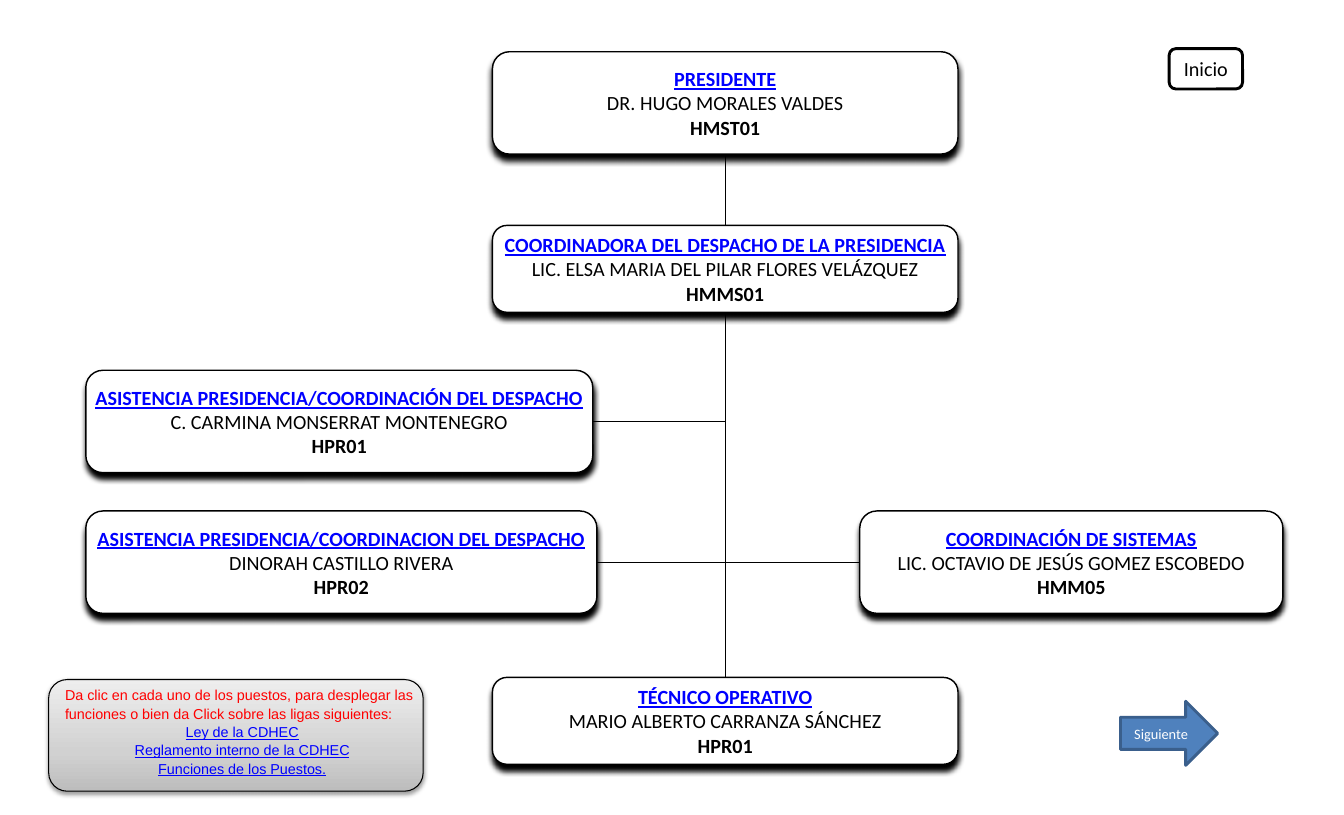
import copy

import pptx
import pptx.dml.color
import pptx.enum.shapes
import pptx.enum.text
import pptx.util
from lxml import etree
from pptx.util import Inches

SHAPE = pptx.enum.shapes.MSO_SHAPE
ALIGN = pptx.enum.text.PP_ALIGN
ANCHOR = pptx.enum.text.MSO_ANCHOR
NS = "http://schemas.openxmlformats.org/drawingml/2006/main"
BLACK, WHITE, LINK = "000000", "FFFFFF", "0000FF"
TOP, LEFT, BOTTOM, RIGHT = range(4)


def color(value):
    return pptx.dml.color.RGBColor.from_string(value)


def add_box(slide, kind, box, fill, outline, weight):
    shape = slide.shapes.add_shape(kind, *map(Inches, box))
    shape.shadow.inherit = False
    if fill:
        shape.fill.solid()
        shape.fill.fore_color.rgb = color(fill)
    shape.line.color.rgb = color(outline)
    shape.line.width = pptx.util.Pt(weight)
    shape.text_frame.word_wrap = True
    shape.text_frame.vertical_anchor = ANCHOR.MIDDLE
    return shape


def add_shadow(shape, alpha, blur, distance):
    effects = shape.element.spPr.find(f"{{{NS}}}effectLst")
    shadow = etree.SubElement(
        effects, f"{{{NS}}}outerShdw", blurRad=str(pptx.util.Pt(blur)),
        dist=str(pptx.util.Pt(distance)), dir="5400000", rotWithShape="0")
    tint = etree.SubElement(shadow, f"{{{NS}}}srgbClr", val=BLACK)
    etree.SubElement(tint, f"{{{NS}}}alpha", val=str(alpha * 1000))


def write_lines(frame, lines, size, font="Calibri"):
    for index, (text, tint, bold, underline, align) in enumerate(lines):
        paragraph = frame.add_paragraph() if index else frame.paragraphs[0]
        paragraph.alignment = align
        run = paragraph.add_run()
        run.text = text
        run.font.size = pptx.util.Pt(size)
        run.font.name = font
        run.font.color.rgb = color(tint)
        run.font.bold = bold
        run.font.underline = underline


def add_post(slide, box, post, holder, code):
    shape = add_box(slide, SHAPE.ROUNDED_RECTANGLE, box, WHITE, BLACK, 1)
    add_shadow(shape, 100, 4, 4)
    frame = shape.text_frame
    frame.word_wrap = False
    frame.margin_left = frame.margin_right = Inches(0.17)
    frame.margin_top = frame.margin_bottom = Inches(0.09)
    write_lines(frame, [
        (post, LINK, True, True, ALIGN.CENTER),
        (holder, BLACK, False, False, ALIGN.CENTER),
        (code, BLACK, True, False, ALIGN.CENTER),
    ], 14)
    return shape


def add_link(slide, start, start_side, end, end_side):
    link = slide.shapes.add_connector(
        pptx.enum.shapes.MSO_CONNECTOR.STRAIGHT, 0, 0, 0, 0)
    link.begin_connect(start, start_side)
    if end:
        link.end_connect(end, end_side)
    link.line.color.rgb = color(BLACK)
    link.line.width = pptx.util.Pt(0.75)
    etree.SubElement(link.element.spPr, f"{{{NS}}}effectLst")
    return link


def add_org_chart(slide, left, top):
    column, width, tall, short = left + 3.93, 4.5, 0.99, 0.84
    third_row, fourth_row = top + 3.08, top + 4.44

    president = add_post(slide, (column, top, width, tall), "PRESIDENTE",
                         "DR. HUGO MORALES VALDES", "HMST01")
    technician = add_post(slide, (column, top + 6.05, width, short), "TÉCNICO OPERATIVO",
                          "MARIO ALBERTO CARRANZA SÁNCHEZ", "HPR01")
    trunk = add_link(slide, president, BOTTOM, technician, TOP)
    add_post(slide, (column, top + 1.68, width, short),
             "COORDINADORA DEL DESPACHO DE LA PRESIDENCIA",
             "LIC. ELSA MARIA DEL PILAR FLORES VELÁZQUEZ", "HMMS01")

    first_assistant = add_post(slide, (left, third_row, 4.9, tall),
                               "ASISTENCIA PRESIDENCIA/COORDINACIÓN DEL DESPACHO",
                               "C. CARMINA MONSERRAT MONTENEGRO", "HPR01")
    branch = add_link(slide, first_assistant, RIGHT, None, None)
    branch.end_x, branch.end_y = trunk.begin_x, branch.begin_y

    second_assistant = add_post(slide, (left, fourth_row, 4.94, tall),
                                "ASISTENCIA PRESIDENCIA/COORDINACION DEL DESPACHO",
                                "DINORAH CASTILLO RIVERA", "HPR02")
    systems = add_post(slide, (left + 7.48, fourth_row, 4.09, tall),
                       "COORDINACIÓN DE SISTEMAS",
                       "LIC. OCTAVIO DE JESÚS GOMEZ ESCOBEDO", "HMM05")
    add_link(slide, second_assistant, RIGHT, systems, LEFT)


def add_instructions(slide, left, top, width, height):
    panel = add_box(slide, SHAPE.ROUNDED_RECTANGLE, (left, top, width, height),
                    None, BLACK, 0.75)
    add_shadow(panel, 38, 3.1, 1.6)
    panel.fill.gradient()
    panel.fill.gradient_angle = 90
    stops = panel.element.spPr.find(f".//{{{NS}}}gsLst")
    stops.append(copy.deepcopy(stops[0]))
    shades = [(0, "BDBDBD"), (0.35, "D1D1D1"), (1, "EEEEEE")]
    for stop, (position, shade) in zip(panel.fill.gradient_stops, shades):
        stop.position = position
        stop.color.rgb = color(shade)

    guide = slide.shapes.add_textbox(
        *map(Inches, (left + 0.06, top + 0.01, width, 0.94))).text_frame
    guide.word_wrap = True
    links = ["Ley de la CDHEC", "Reglamento interno de la CDHEC",
             "Funciones de los Puestos."]
    write_lines(guide, [
        ("Da clic en cada uno de los puestos, para desplegar las funciones "
         "o bien da Click sobre las ligas siguientes:",
         "FF0000", False, False, ALIGN.LEFT),
        *((link, LINK, False, True, ALIGN.CENTER) for link in links),
    ], 10, "Arial")
    for paragraph in guide.paragraphs:
        paragraph.line_spacing = 1.06


def add_button(slide, kind, box, label, size, fill, outline, tint):
    button = add_box(slide, kind, box, fill, outline, 2)
    write_lines(button.text_frame, [(label, tint, False, False, ALIGN.CENTER)], size)


def main():
    deck = pptx.Presentation()
    deck.slide_width, deck.slide_height = Inches(12.99), Inches(7.88)
    slide = deck.slides.add_slide(deck.slide_layouts[6])
    add_org_chart(slide, 0.83, 0.5)
    add_button(slide, SHAPE.ROUNDED_RECTANGLE, (11.3, 0.47, 0.71, 0.39),
               "Inicio", 14, WHITE, BLACK, BLACK)
    add_instructions(slide, 0.47, 6.57, 3.62, 1.08)
    add_button(slide, SHAPE.RIGHT_ARROW, (10.83, 6.78, 0.94, 0.62),
               "Siguiente", 10, "4F81BD", "3A5F8C", WHITE)
    deck.save("out.pptx")


if __name__ == "__main__":
    main()
